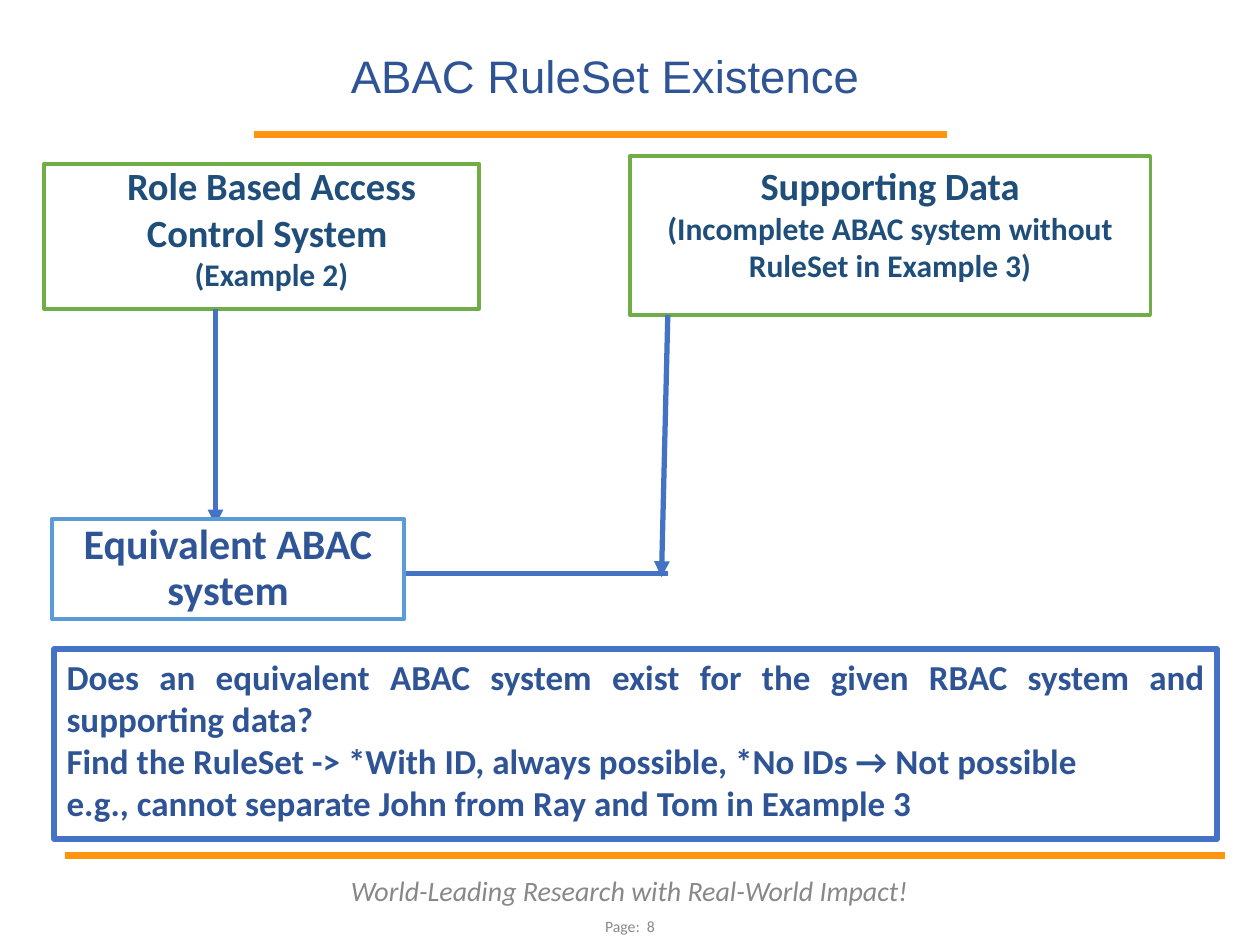
import pptx
import pptx.dml.color
import pptx.enum.shapes
import pptx.enum.text
import pptx.oxml.ns
import pptx.util
from lxml import etree

COLUMNS, ROWS = 100, 75  # grid units across and down the slide
ALIGN = pptx.enum.text.PP_ALIGN
ANCHOR = pptx.enum.text.MSO_ANCHOR
ORANGE, BLUE, GREEN, PALE_BLUE = "FF950E", "4472C4", "70AD47", "5B9BD5"
INK, NAVY, MID_BLUE, GREY, WHITE = "2F5496", "1E4E79", "2F5597", "888888", "FFFFFF"

deck = pptx.Presentation()
deck.slide_width = pptx.util.Inches(10)
deck.slide_height = pptx.util.Inches(7.5)


def color(value):
    return pptx.dml.color.RGBColor.from_string(value)


def across(columns):
    return round(deck.slide_width * columns / COLUMNS)


def down(rows):
    return round(deck.slide_height * rows / ROWS)


def place(left, top, width, height):
    return across(left), down(top), across(width), down(height)


def add_line(page, start, end, ink, weight, arrow=False):
    line = page.shapes.add_connector(
        pptx.enum.shapes.MSO_CONNECTOR.STRAIGHT,
        across(start[0]), down(start[1]), across(end[0]), down(end[1]))
    line.line.color.rgb = color(ink)
    line.line.width = pptx.util.Pt(weight)
    if arrow:
        tail = etree.SubElement(line.line._get_or_add_ln(), pptx.oxml.ns.qn("a:tailEnd"))
        tail.set("type", "triangle")
    etree.SubElement(line._element.spPr, pptx.oxml.ns.qn("a:effectLst"))


def add_frame(page, area, ink, weight, fill=None):
    """Outlined rectangle, unfilled unless a fill is given."""
    box = page.shapes.add_shape(pptx.enum.shapes.MSO_SHAPE.RECTANGLE, *place(*area))
    box.shadow.inherit = False
    if fill:
        box.fill.solid()
        box.fill.fore_color.rgb = color(fill)
    else:
        box.fill.background()
    box.line.color.rgb = color(ink)
    box.line.width = pptx.util.Pt(weight)
    return box


def add_text(page, area):
    return page.shapes.add_textbox(*place(*area))


def write(box, lines, ink, anchor=ANCHOR.TOP, spacing=None, **style):
    """Fill a box with lines of (text, size, alignment)."""
    frame = box.text_frame
    frame.word_wrap = True
    frame.vertical_anchor = anchor
    for index, (text, size, align) in enumerate(lines):
        para = frame.add_paragraph() if index else frame.paragraphs[0]
        para.alignment = align
        para.line_spacing = spacing
        span = para.add_run()
        span.text = text
        span.font.color.rgb = color(ink)
        values = {"name": "Calibri", "size": pptx.util.Pt(size), **style}
        for name, value in values.items():
            setattr(span.font, name, value)


def add_title_and_footer(page):
    add_line(page, (20.2, 10.7), (75.2, 10.7), ORANGE, 4)
    add_line(page, (5.2, 67.9), (97.2, 67.9), ORANGE, 4)
    write(add_text(page, (20, 2.5, 56.1, 6.2)),
          [("ABAC RuleSet Existence", 26, ALIGN.CENTER)],
          INK, ANCHOR.BOTTOM, 0.9, name="Arial")
    write(add_text(page, (25.8, 68.9, 48.3, 3.6)),
          [("World-Leading Research with Real-World Impact!", 16, ALIGN.CENTER)],
          GREY, ANCHOR.MIDDLE, italic=True)
    write(add_text(page, (40.6, 71.7, 18.8, 3.6)),
          [("Page:  8", 9, ALIGN.CENTER)], GREY, ANCHOR.MIDDLE)


def add_systems(page):
    add_frame(page, (3.5, 13, 34.5, 11.5), GREEN, 2.25, WHITE)
    write(add_text(page, (5.1, 12.4, 32.9, 8.4)),
          [("Role Based Access Control System ", 22, ALIGN.CENTER),
           ("(Example 2)", 18, ALIGN.CENTER)], NAVY, bold=True)
    write(add_frame(page, (50, 12.4, 41.3, 12.6), GREEN, 2, WHITE),
          [("Supporting Data", 22, ALIGN.CENTER),
           ("(Incomplete ABAC system without RuleSet in Example 3)", 18, ALIGN.CENTER)],
          NAVY, bold=True)
    add_line(page, (17.1, 24.5), (17.1, 41.7), BLUE, 3, arrow=True)
    add_line(page, (53, 45.5), (30.6, 45.5), BLUE, 3, arrow=True)
    # The result box covers the two arrowheads that reach into it.
    write(add_frame(page, (4.1, 41.2, 28, 7.9), PALE_BLUE, 2.25, WHITE),
          [("Equivalent ABAC system", 24, ALIGN.CENTER)],
          MID_BLUE, ANCHOR.MIDDLE, 0.9, bold=True)
    add_line(page, (53, 25), (52.5, 45.8), BLUE, 3, arrow=True)


def add_question(page):
    write(add_frame(page, (4.3, 51.5, 92.3, 15.1), BLUE, 3),
          [("Does an equivalent ABAC system exist for the given RBAC system "
            "and supporting data?", 20, ALIGN.JUSTIFY),
           ("Find the RuleSet -> *With ID, always possible, "
            "*No IDs → Not possible", 20, ALIGN.JUSTIFY),
           ("e.g., cannot separate John from Ray and Tom in Example 3", 20, ALIGN.LEFT)],
          INK, bold=True)


def main():
    page = deck.slides.add_slide(deck.slide_layouts[6])
    add_title_and_footer(page)
    add_systems(page)
    add_question(page)
    deck.save("out.pptx")


if __name__ == "__main__":
    main()
